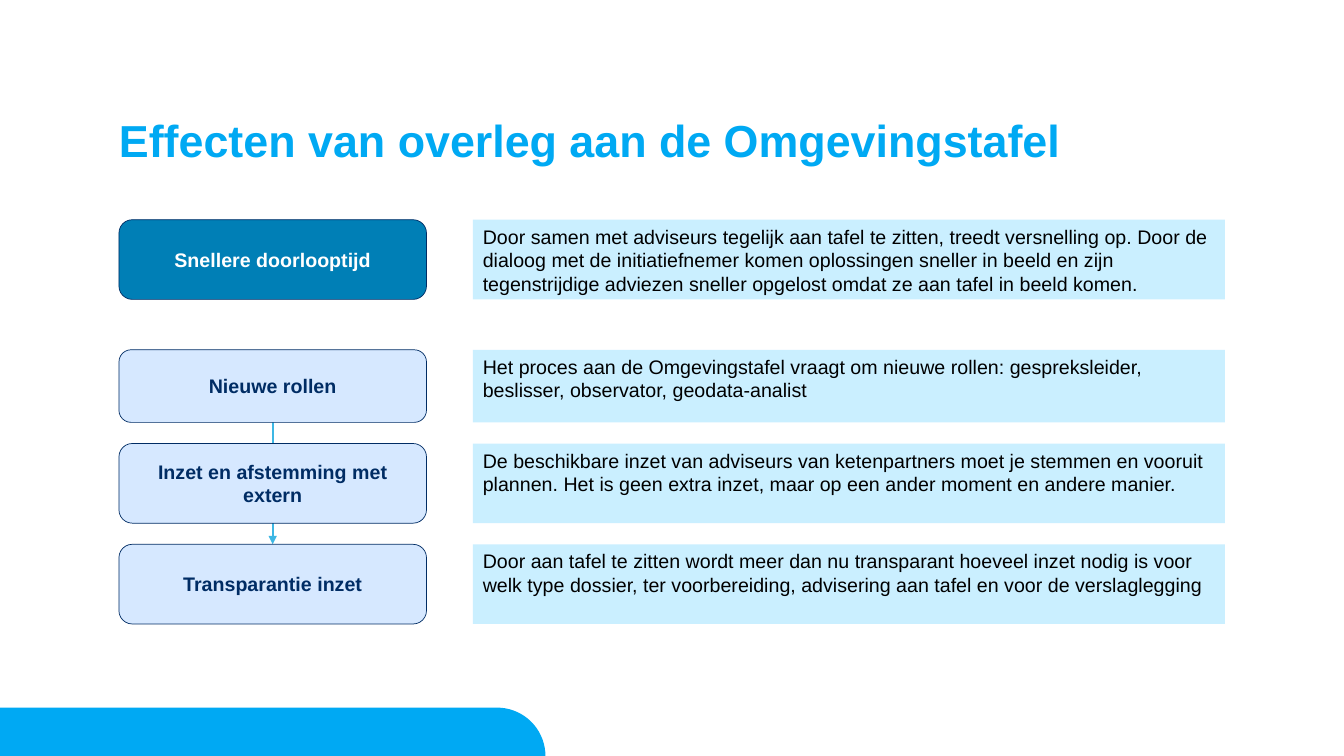
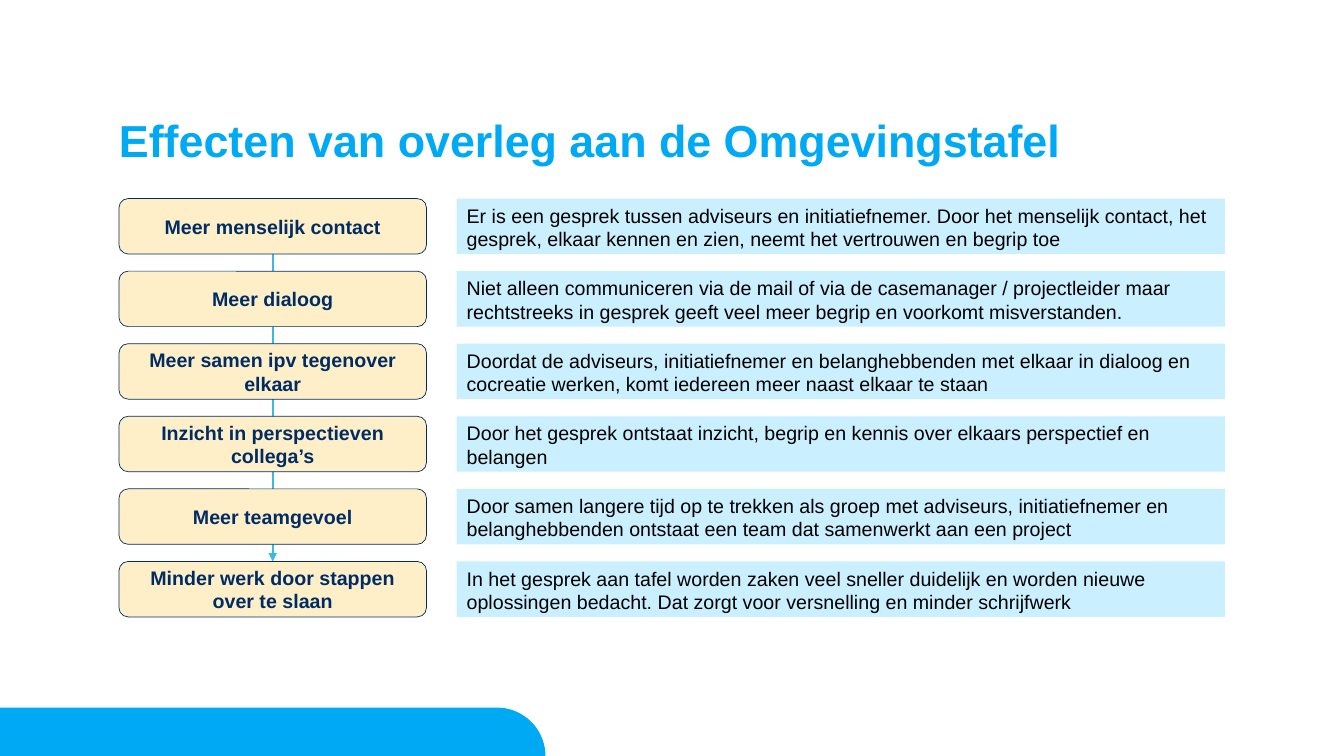
import math

from lxml import etree
from pptx import Presentation
from pptx.dml.color import RGBColor
from pptx.enum import shapes, text
from pptx.oxml import ns
from pptx.util import Inches, Pt

SKY = RGBColor(0x00, 0xA9, 0xF3)
ARROW = RGBColor(0x3D, 0xB7, 0xE4)
NAVY = RGBColor(0x00, 0x2C, 0x64)
TEAL = RGBColor(0x00, 0x7F, 0xB6)
PALE_BLUE = RGBColor(0xD6, 0xE8, 0xFF)
CREAM = RGBColor(0xFF, 0xEF, 0xC9)
ICE = RGBColor(0xCA, 0xEF, 0xFF)
WHITE = RGBColor(0xFF, 0xFF, 0xFF)
BLACK = RGBColor(0x00, 0x00, 0x00)

FONT = "Arial"
TITLE = "Effecten van overleg aan de Omgevingstafel"
LEFT, RIGHT = 1.18, 12.15
LABEL_W = 3.05
BAND_TOP, BAND_W, BAND_H = 7.02, 5.41, 0.48


def write(sp, content, size=14, color=BLACK, bold=False,
          align=text.PP_ALIGN.LEFT, anchor=text.MSO_ANCHOR.TOP,
          margin=None, spacing=None):
    tf = sp.text_frame
    tf.word_wrap = True
    tf.auto_size = text.MSO_AUTO_SIZE.NONE
    tf.vertical_anchor = anchor
    if margin is not None:
        tf.margin_left = tf.margin_right = Inches(margin)
        tf.margin_top = tf.margin_bottom = Inches(margin)
    p = tf.paragraphs[0]
    p.alignment = align
    if spacing:
        p.line_spacing = spacing
    r = p.add_run()
    r.text = content
    r.font.name, r.font.size, r.font.bold = FONT, Pt(size), bold
    r.font.color.rgb = color


def add_box(s, kind, left, top, width, height, fill, line=None):
    sp = s.shapes.add_shape(kind, Inches(left), Inches(top), Inches(width), Inches(height))
    sp.shadow.inherit = False
    sp.fill.solid()
    sp.fill.fore_color.rgb = fill
    if line is None:
        sp.line.fill.background()
    else:
        sp.line.color.rgb = line
        sp.line.width = Pt(0.5)
    return sp


# Each row: top, height, label fill, label colour, label, explanation
effects = [
    (2.18, 0.79, TEAL, WHITE, "Snellere doorlooptijd",
     "Door samen met adviseurs tegelijk aan tafel te zitten, treedt versnelling op. "
     "Door de dialoog met de initiatiefnemer komen oplossingen sneller in beeld en zijn "
     "tegenstrijdige adviezen sneller opgelost omdat ze aan tafel in beeld komen."),
    (3.47, 0.72, PALE_BLUE, NAVY, "Nieuwe rollen",
     "Het proces aan de Omgevingstafel vraagt om nieuwe rollen: gespreksleider, "
     "beslisser, observator, geodata-analist"),
    (4.4, 0.79, PALE_BLUE, NAVY, "Inzet en afstemming met extern",
     "De beschikbare inzet van adviseurs van ketenpartners moet je stemmen en vooruit "
     "plannen. Het is geen extra inzet, maar op een ander moment en andere manier."),
    (5.4, 0.79, PALE_BLUE, NAVY, "Transparantie inzet",
     "Door aan tafel te zitten wordt meer dan nu transparant hoeveel inzet nodig is voor "
     "welk type dossier, ter voorbereiding, advisering aan tafel en voor de verslaglegging"),
]

contact = [
    ("Meer menselijk contact",
     "Er is een gesprek tussen adviseurs en initiatiefnemer. Door het menselijk contact, "
     "het gesprek, elkaar kennen en zien, neemt het vertrouwen en begrip toe"),
    ("Meer dialoog",
     "Niet alleen communiceren via de mail of via de casemanager / projectleider maar "
     "rechtstreeks in gesprek geeft veel meer begrip en voorkomt misverstanden."),
    ("Meer samen ipv tegenover elkaar",
     "Doordat de adviseurs, initiatiefnemer en belanghebbenden met elkaar in dialoog en "
     "cocreatie werken, komt iedereen meer naast elkaar te staan"),
    ("Inzicht in perspectieven collega’s",
     "Door het gesprek ontstaat inzicht, begrip en kennis over elkaars perspectief en "
     "belangen"),
    ("Meer teamgevoel",
     "Door samen langere tijd op te trekken als groep met adviseurs, initiatiefnemer en "
     "belanghebbenden ontstaat een team dat samenwerkt aan een project"),
    ("Minder werk door stappen over te slaan",
     "In het gesprek aan tafel worden zaken veel sneller duidelijk en worden nieuwe "
     "oplossingen bedacht. Dat zorgt voor versnelling en minder schrijfwerk"),
]
contact_rows = [(1.97 + 0.72 * i, 0.55, CREAM, NAVY, label, body)
                for i, (label, body) in enumerate(contact)]

# Each slide: rows, left edge of the explanations, first row of the arrow
slides = [(effects, 4.69, 1), (contact_rows, 4.53, 0)]

prs = Presentation()
prs.slide_width, prs.slide_height = Inches(13.33), Inches(7.5)

for rows, body_left, arrow_row in slides:
    s = prs.slides.add_slide(prs.slide_layouts[5])

    # Bottom band with a quarter-circle corner
    corner = [(BAND_W - BAND_H + BAND_H * math.sin(math.radians(a)),
               BAND_TOP + BAND_H - BAND_H * math.cos(math.radians(a)))
              for a in range(0, 91, 5)]
    builder = s.shapes.build_freeform(0, Inches(BAND_TOP + BAND_H))
    builder.add_line_segments([(Inches(x), Inches(y)) for x, y in [(0, BAND_TOP)] + corner])
    band = builder.convert_to_shape()
    band.shadow.inherit = False
    band.fill.solid()
    band.fill.fore_color.rgb = SKY
    band.line.fill.background()

    title = s.shapes.title
    title.left, title.top = Inches(LEFT), Inches(1.18)
    title.width, title.height = Inches(RIGHT - LEFT), Inches(0.79)
    write(title, TITLE, size=32, color=SKY, bold=True, margin=0, spacing=0.9)

    # Arrow running behind the labels to the last one
    top, height = rows[arrow_row][:2]
    x = Inches(LEFT + LABEL_W / 2)
    arrow = s.shapes.add_connector(shapes.MSO_CONNECTOR.STRAIGHT,
                                   x, Inches(top + height / 2), x, Inches(rows[-1][0]))
    arrow.line.color.rgb = ARROW
    arrow.line.width = Pt(1.5)
    etree.SubElement(arrow.line._get_or_add_ln(), ns.qn("a:tailEnd"), type="triangle")
    etree.SubElement(arrow._element.spPr, ns.qn("a:effectLst"))

    for top, height, fill, color, label, body in rows:
        sp = add_box(s, shapes.MSO_SHAPE.ROUNDED_RECTANGLE,
                     LEFT, top, LABEL_W, height, fill, line=NAVY)
        write(sp, label, color=color, bold=True,
              align=text.PP_ALIGN.CENTER, anchor=text.MSO_ANCHOR.MIDDLE)
        sp = add_box(s, shapes.MSO_SHAPE.RECTANGLE,
                     body_left, top, RIGHT - body_left, height, ICE)
        write(sp, body)

prs.save("out.pptx")
